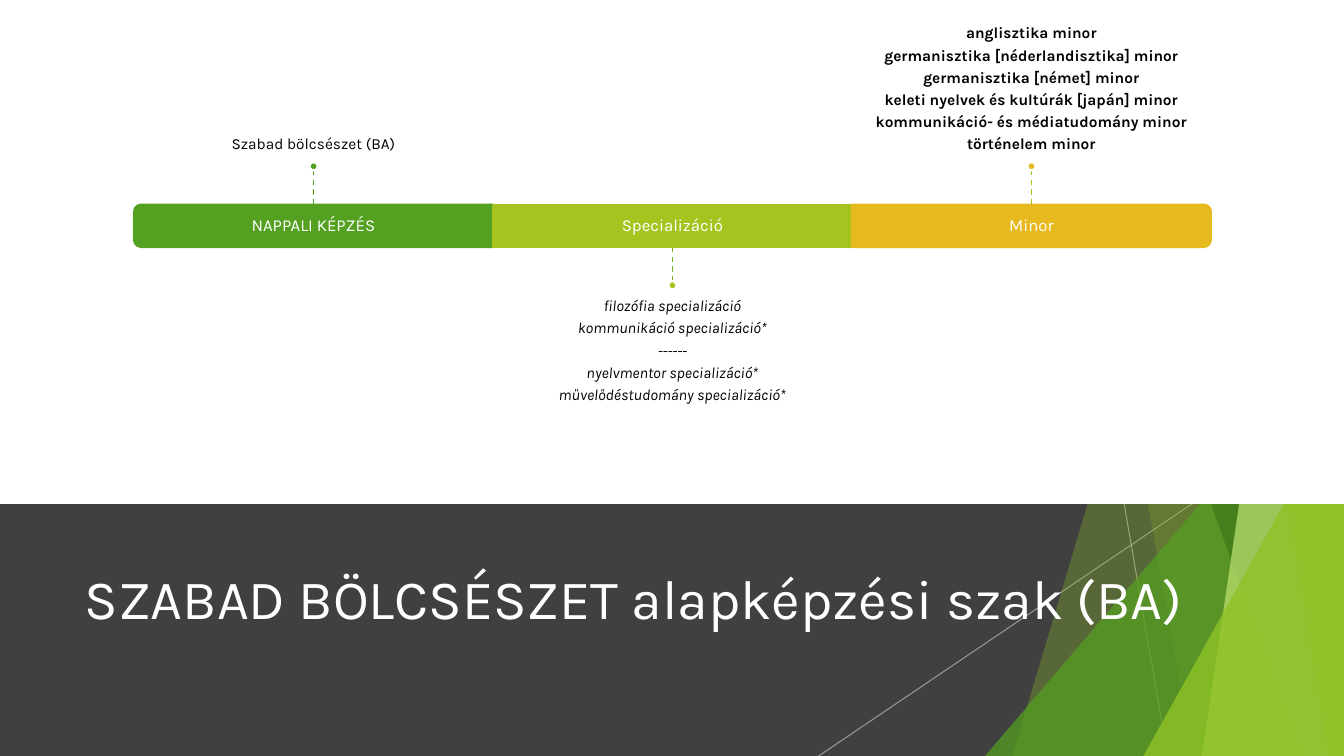
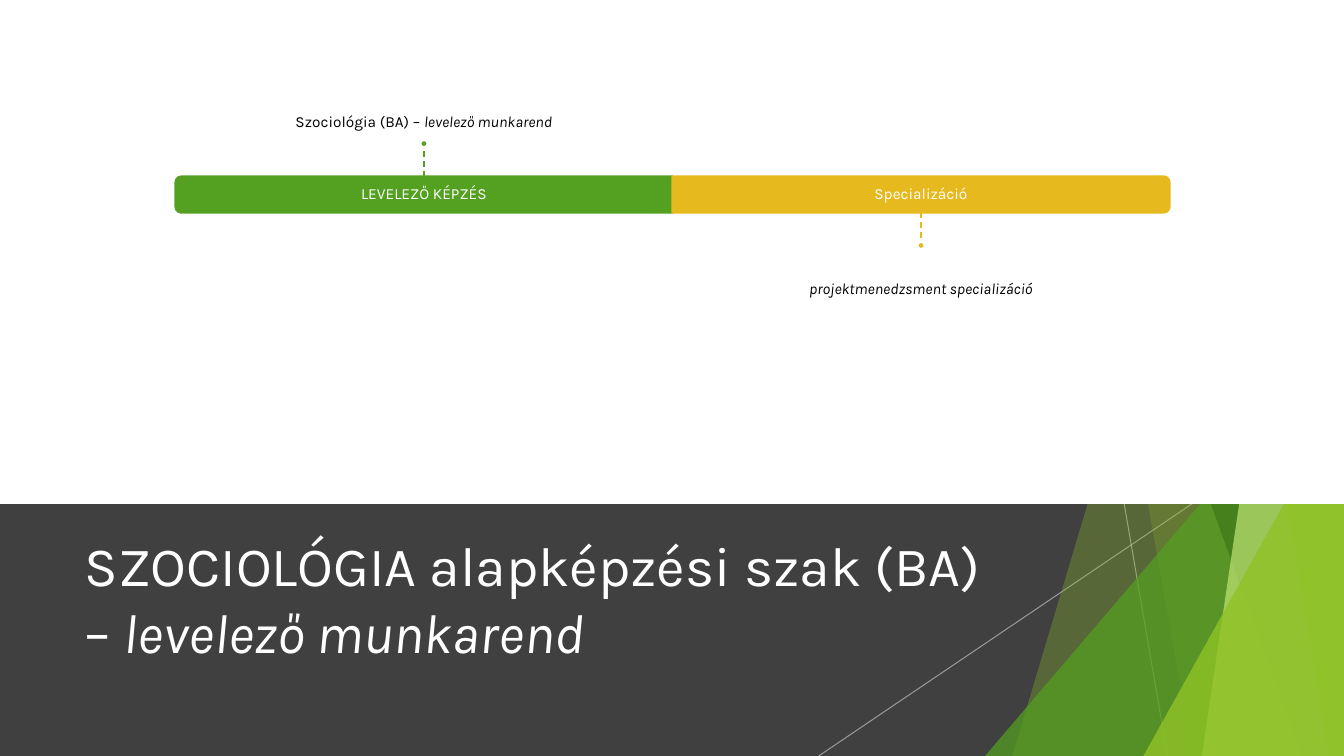
import pptx
import pptx.util
import pptx.dml.color
import pptx.enum.dml
import pptx.enum.shapes
import pptx.enum.text
import pptx.oxml
import pptx.oxml.ns

Inches = pptx.util.Inches
Pt = pptx.util.Pt
SHAPE = pptx.enum.shapes.MSO_SHAPE
ANCHOR = pptx.enum.text.MSO_ANCHOR
ALIGN = pptx.enum.text.PP_ALIGN

FONT = "Karla"
WIDTH, HEIGHT, BAND_TOP = 13.33, 7.5, 5
COLORS = {
    "white": "FFFFFF", "black": "000000", "band": "404040", "ray": "BFBFBF",
    "green": "54A021", "leaf": "79B220", "lime": "A5C41F", "gold": "E6B91E",
    "facet": "90C226", "forest": "3F7819", "pale": "C0E474",
}

RAYS = [(11.15, 11.58), (11.82, 8.12)]
FACETS = [
    (12.28, 0, 10.04, "facet", 30),
    (10.5, 0, 11.83, "facet", 20),
    (WIDTH, 3.33, 9.77, "green", 72),
    (10.21, 0, 12.91, "forest", 70),
    (13.03, 0, 11.92, "pale", 70),
    (11.96, 0, 13.18, "facet", 65),
    (WIDTH, 3.93, 11.34, "facet", 80),
]

SLIDES = [
    {
        "title": ["SZABAD BÖLCSÉSZET alapképzési szak (BA)"],
        "title_width": 11.82,
        "left": 1.33, "top": 2.03, "segment": 3.56, "height": 0.42,
        "stem": 0.34, "dot": 0.08, "label": (5.94, 1.49), "size": 12,
        "segments": [
            {"name": "NAPPALI KÉPZÉS", "color": "green", "stem_color": "green",
             "above": True, "lines": ["Szabad bölcsészet (BA)"]},
            {"name": "Specializáció", "color": "lime", "stem_color": "leaf",
             "above": False, "italic": True, "lines": [
                 "filozófia specializáció",
                 "kommunikáció specializáció*",
                 "------",
                 "nyelvmentor specializáció*",
                 "művelődéstudomány specializáció*"]},
            {"name": "Minor", "color": "gold", "stem_color": "lime",
             "above": True, "bold": True, "lines": [
                 "anglisztika minor",
                 "germanisztika [néderlandisztika] minor",
                 "germanisztika [német] minor",
                 "keleti nyelvek és kultúrák [japán] minor",
                 "kommunikáció- és médiatudomány minor",
                 "történelem minor"]},
        ],
    },
    {
        "title": [[("SZOCIOLÓGIA alapképzési szak (BA) – ", False),
                   ("levelező munkarend", True)]],
        "title_width": 9.4,
        "left": 1.74, "top": 1.75, "segment": 4.93, "height": 0.36,
        "stem": 0.29, "dot": 0.07, "label": (4.93, 1.27), "size": 11,
        "segments": [
            {"name": "LEVELEZŐ KÉPZÉS", "color": "green", "stem_color": "green",
             "above": True, "lines": [[("Szociológia (BA) – ", False),
                                       ("levelező munkarend", True)]]},
            {"name": "Specializáció", "color": "gold", "stem_color": "gold",
             "above": False, "italic": True, "offset": 0.23,
             "lines": ["projektmenedzsment specializáció"]},
        ],
    },
]


def rgb(name):
    return pptx.dml.color.RGBColor.from_string(COLORS[name])


def set_alpha(shape, percent):
    for color in shape._element.spPr.iter(pptx.oxml.ns.qn("a:srgbClr")):
        alpha = pptx.oxml.parse_xml(
            f'<a:alpha {pptx.oxml.ns.nsdecls("a")} val="{percent * 1000}"/>')
        color.append(alpha)


def paint(shape, fill, line=None):
    shape.shadow.inherit = False
    shape.fill.solid()
    shape.fill.fore_color.rgb = rgb(fill)
    if line:
        shape.line.color.rgb = rgb(line)
        shape.line.width = Pt(1.5)
    else:
        shape.line.fill.background()


def add_block(slide, kind, left, top, width, height, fill, line=None):
    shape = slide.shapes.add_shape(
        kind, Inches(left), Inches(top), Inches(width), Inches(height))
    paint(shape, fill, line)
    return shape


def add_line(slide, start, end, color, width, dashed=False):
    connector = slide.shapes.add_connector(
        pptx.enum.shapes.MSO_CONNECTOR.STRAIGHT,
        *[Inches(value) for value in (*start, *end)])
    connector.line.color.rgb = rgb(color)
    connector.line.width = Pt(width)
    if dashed:
        connector.line.dash_style = pptx.enum.dml.MSO_LINE.DASH
    connector._element.spPr.append(pptx.oxml.parse_xml(
        f'<a:effectLst {pptx.oxml.ns.nsdecls("a")}/>'))
    return connector


def add_text(slide, paragraphs, left, top, width, height, size=11, color="black",
             bold=False, italic=False, anchor=ANCHOR.MIDDLE, align=ALIGN.CENTER,
             spacing=0.9, after=4, margins=(0, 0, 0, 0)):
    box = slide.shapes.add_textbox(
        Inches(left), Inches(top), Inches(width), Inches(height))
    frame = box.text_frame
    frame.word_wrap = True
    frame.vertical_anchor = anchor
    (frame.margin_left, frame.margin_top,
     frame.margin_right, frame.margin_bottom) = map(Inches, margins)
    for index, runs in enumerate(paragraphs):
        paragraph = frame.add_paragraph() if index else frame.paragraphs[0]
        paragraph.alignment = align
        paragraph.line_spacing = spacing
        paragraph.space_after = Pt(after)
        if isinstance(runs, str):
            runs = [(runs, italic)]
        for text, slanted in runs:
            run = paragraph.add_run()
            run.text = text
            run.font.name = FONT
            run.font.size = Pt(size)
            run.font.bold = bold
            run.font.italic = slanted
            run.font.color.rgb = rgb(color)


def add_facet(slide, top_x, top_y, bottom_x, color, alpha):
    if top_x == WIDTH:
        facet = add_block(slide, SHAPE.ISOSCELES_TRIANGLE, bottom_x, top_y,
                          WIDTH - bottom_x, HEIGHT - top_y, color)
        facet.adjustments[0] = 1
    else:
        builder = slide.shapes.build_freeform(Inches(top_x), Inches(top_y))
        corners = [(WIDTH, top_y), (WIDTH, HEIGHT), (bottom_x, HEIGHT)]
        builder.add_line_segments(
            [(Inches(x), Inches(y)) for x, y in corners], close=True)
        facet = builder.convert_to_shape()
        paint(facet, color)
    set_alpha(facet, alpha)


def add_frame(slide, title, title_width):
    add_block(slide, SHAPE.RECTANGLE, 0, BAND_TOP, WIDTH, HEIGHT - BAND_TOP, "band")
    for top_x, bottom_x in RAYS:
        ray = add_line(slide, (top_x, BAND_TOP), (bottom_x, HEIGHT), "ray", 0.75)
        set_alpha(ray, 70)
    for facet in FACETS:
        add_facet(slide, *facet)
    add_text(slide, title, 0.74, 5.21, title_width, 1.44, size=39.6, color="white",
             align=ALIGN.LEFT, spacing=1.0, after=0, margins=(0.1, 0.05, 0.1, 0.05))
    add_block(slide, SHAPE.RECTANGLE, 0, 0, WIDTH, BAND_TOP, "white")


def add_bar(slide, left, top, width, height, color, rotation):
    if rotation is None:
        return add_block(slide, SHAPE.RECTANGLE, left, top, width, height, color, color)
    bar = add_block(slide, SHAPE.ROUND_2_SAME_RECTANGLE,
                    left + (width - height) / 2, top + (height - width) / 2,
                    height, width, color, color)
    bar.rotation = rotation
    return bar


def add_timeline(slide, spec_):
    segments = spec_["segments"]
    width, height, top = spec_["segment"], spec_["height"], spec_["top"]
    dot, stem_length = spec_["dot"], spec_["stem"]
    label_width, label_height = spec_["label"]
    rotations = [270] + [None] * (len(segments) - 2) + [90]
    for index, (segment, rotation) in enumerate(zip(segments, rotations)):
        left = spec_["left"] + index * width
        center = left + width / 2
        color, above = segment["color"], segment["above"]
        bar = add_bar(slide, left, top, width, height, color, rotation)
        add_text(slide, [segment["name"]], left, top, width, height,
                 size=spec_["size"], color="white", margins=(0.1, 0.1, 0.1, 0.1))

        offset = segment.get("offset", 0)
        if above:
            start, end = top, top - stem_length
            dot_top = end - dot
            label_top = dot_top - label_height
        else:
            start, end = top + height, top + height + stem_length
            dot_top = end
            label_top = dot_top + dot + offset
        add_text(slide, segment["lines"], center - label_width / 2, label_top,
                 label_width, label_height - offset,
                 bold=segment.get("bold", False), italic=segment.get("italic", False),
                 anchor=ANCHOR.BOTTOM if above else ANCHOR.TOP,
                 margins=(0, 0, 0, 0.09) if above else (0, 0.09, 0, 0))
        stem = add_line(slide, (center, start), (center, end),
                        segment["stem_color"], 1, dashed=True)
        if rotation is None:
            stem.begin_connect(bar, 0 if above else 2)
        add_block(slide, SHAPE.OVAL, center - dot / 2, dot_top, dot, dot, color, "white")


def main():
    presentation = pptx.Presentation()
    presentation.slide_width = Inches(WIDTH)
    presentation.slide_height = Inches(HEIGHT)
    for content in SLIDES:
        slide = presentation.slides.add_slide(presentation.slide_layouts[6])
        add_frame(slide, content["title"], content["title_width"])
        add_timeline(slide, content)
    presentation.save("out.pptx")


if __name__ == "__main__":
    main()
